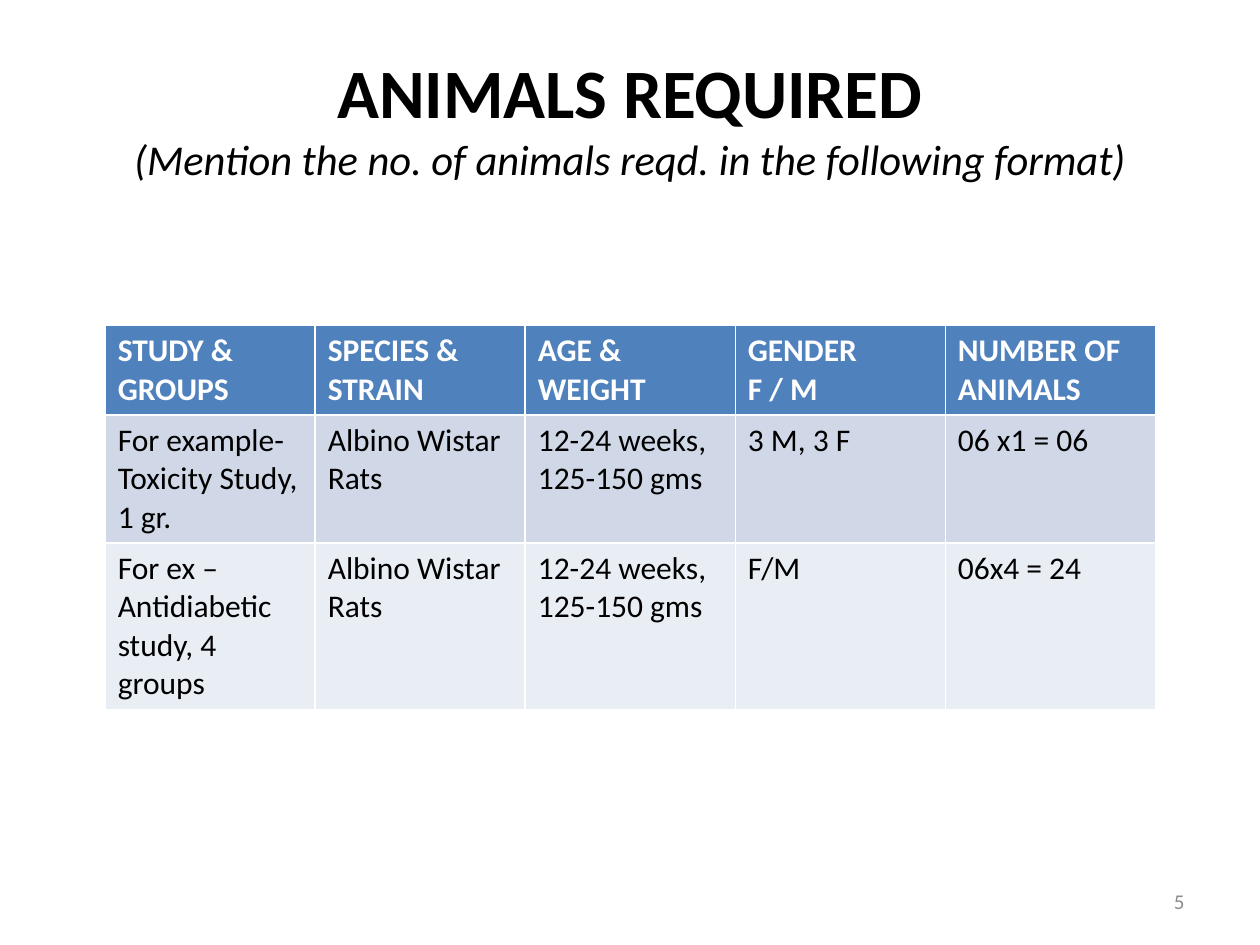
from pptx import Presentation
from pptx.dml.color import RGBColor
from pptx.enum import text
from pptx.util import Cm, Pt

BLACK = RGBColor(0x00, 0x00, 0x00)
WHITE = RGBColor(0xFF, 0xFF, 0xFF)
GREY = RGBColor(0x8C, 0x8C, 0x8C)
HEADER_BLUE = RGBColor(0x4F, 0x81, 0xBD)
BAND_FILLS = [RGBColor(0xD0, 0xD8, 0xE8), RGBColor(0xE9, 0xED, 0xF4)]

HEADER = ["STUDY & GROUPS", "SPECIES & STRAIN", "AGE & WEIGHT",
          "GENDER\nF / M", "NUMBER OF ANIMALS"]
STUDIES = [
    ["For example-\nToxicity Study, 1 gr.", "Albino Wistar Rats",
     "12-24 weeks,\n125-150 gms", "3 M, 3 F", "06 x1 = 06"],
    ["For ex –\nAntidiabetic study, 4 groups", "Albino Wistar Rats",
     "12-24 weeks,\n125-150 gms", "F/M", "06x4 = 24"],
]
ROW_HEIGHTS = [Cm(1.78), Cm(2.58), Cm(3.35)]


def format_font(font, color, **values):
    font.name = "Calibri"
    font.color.rgb = color
    for name, value in values.items():
        setattr(font, name, value)


def place(shape, box):
    for name, value in zip(("left", "top", "width", "height"), box):
        setattr(shape, name, value)


def add_title(slide, box):
    title = slide.shapes.title
    place(title, box)
    frame = title.text_frame
    frame.auto_size = text.MSO_AUTO_SIZE.NONE
    frame.vertical_anchor = text.MSO_ANCHOR.MIDDLE
    paragraph = frame.paragraphs[0]
    paragraph.alignment = text.PP_ALIGN.CENTER

    # Heading above an italic instruction
    heading = paragraph.add_run()
    heading.text = "ANIMALS REQUIRED"
    format_font(heading.font, BLACK, size=Pt(39.6), bold=True)
    paragraph.add_line_break()
    instruction = paragraph.add_run()
    instruction.text = "(Mention the no. of animals reqd. in the following format)"
    format_font(instruction.font, BLACK, size=Pt(24.3), bold=False, italic=True)


def add_animal_table(slide, box):
    rows = [HEADER] + STUDIES
    # The default table style supplies the white cell borders
    table = slide.shapes.add_table(len(rows), len(HEADER), *box).table
    for row, height in zip(table.rows, ROW_HEIGHTS):
        row.height = height

    for row_index, values in enumerate(rows):
        is_header = row_index == 0
        fill = HEADER_BLUE if is_header else BAND_FILLS[row_index - 1]
        color = WHITE if is_header else BLACK
        for column_index, value in enumerate(values):
            cell = table.cell(row_index, column_index)
            cell.text = value
            cell.fill.solid()
            cell.fill.fore_color.rgb = fill
            for paragraph in cell.text_frame.paragraphs:
                format_font(paragraph.runs[0].font, color,
                            size=Pt(18), bold=is_header)


def add_page_number(slide, box):
    frame = slide.shapes.add_textbox(*box).text_frame
    frame.word_wrap = True
    frame.vertical_anchor = text.MSO_ANCHOR.MIDDLE
    paragraph = frame.paragraphs[0]
    paragraph.alignment = text.PP_ALIGN.RIGHT
    run = paragraph.add_run()
    run.text = "5"
    format_font(run.font, GREY, size=Pt(12))


def main():
    presentation = Presentation()
    presentation.slide_width = Cm(25.4)
    presentation.slide_height = Cm(19.05)
    slide = presentation.slides.add_slide(presentation.slide_layouts[5])

    add_title(slide, (Cm(1.27), Cm(0.76), Cm(22.86), Cm(3.18)))
    add_animal_table(slide, (Cm(2.12), Cm(6.56), Cm(21.17), sum(ROW_HEIGHTS)))
    add_page_number(slide, (Cm(18.2), Cm(17.66), Cm(5.93), Cm(1.01)))
    presentation.save("out.pptx")


if __name__ == "__main__":
    main()
